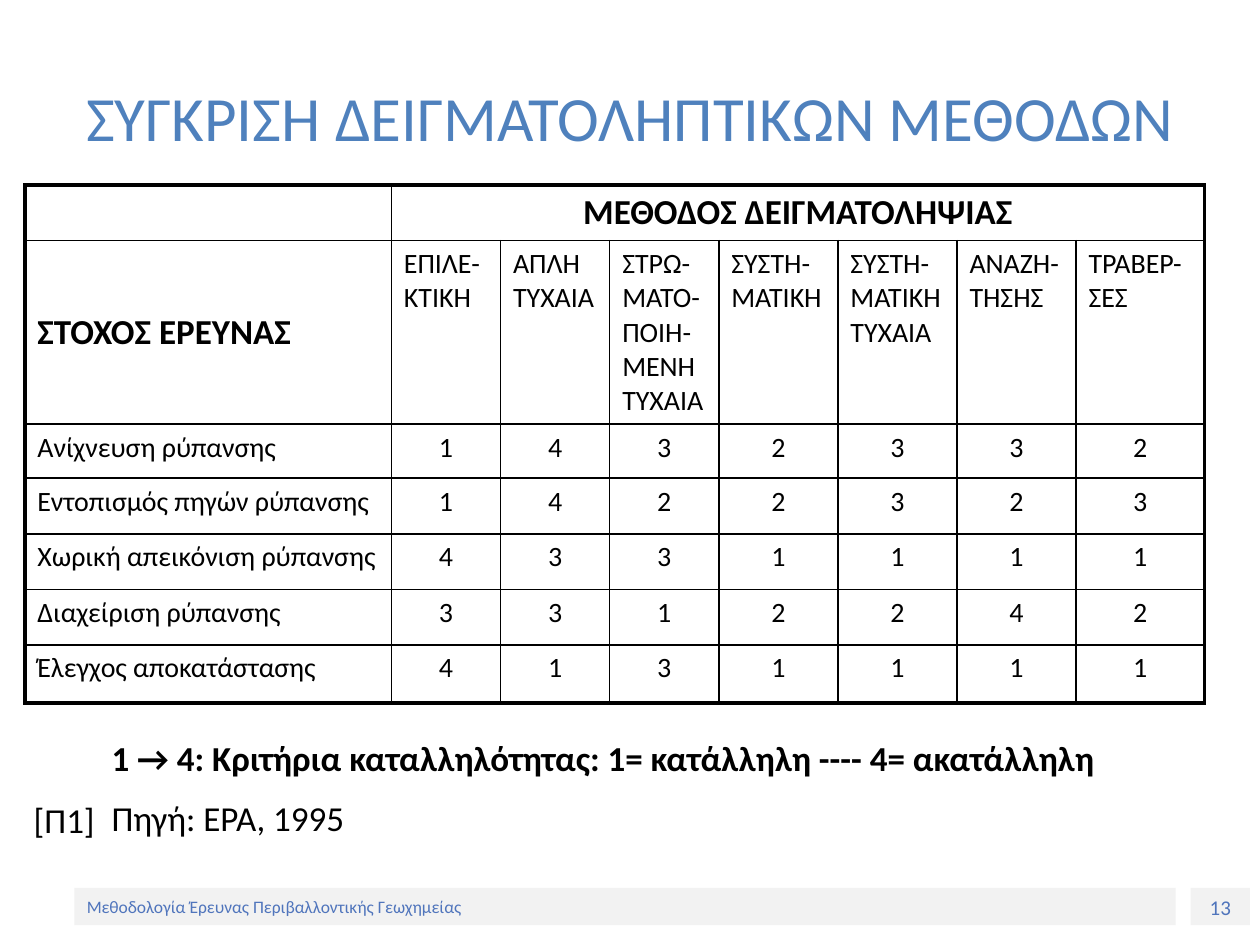
import pptx
import pptx.dml.color
import pptx.enum.shapes
import pptx.enum.text
import pptx.oxml
import pptx.oxml.ns
import pptx.util

Cm, Pt = pptx.util.Cm, pptx.util.Pt
ALIGN = pptx.enum.text.PP_ALIGN
ANCHOR = pptx.enum.text.MSO_ANCHOR

COLORS = {"ink": "000000", "title": "4F81BD", "foot": "5075BC", "band": "F2F2F2"}
FONT = "Calibri"

TITLE = "ΣΥΓΚΡΙΣΗ ΔΕΙΓΜΑΤΟΛΗΠΤΙΚΩΝ ΜΕΘΟΔΩΝ"
GROUP = "ΜΕΘΟΔΟΣ ΔΕΙΓΜΑΤΟΛΗΨΙΑΣ"
GOAL = "ΣΤΟΧΟΣ ΕΡΕΥΝΑΣ"
METHODS = [
    "ΕΠΙΛΕ-ΚΤΙΚΗ", "ΑΠΛΗ ΤΥΧΑΙΑ", "ΣΤΡΩ-ΜΑΤΟ-ΠΟΙΗ-ΜΕΝΗ ΤΥΧΑΙΑ", "ΣΥΣΤΗ-ΜΑΤΙΚΗ",
    "ΣΥΣΤΗ-ΜΑΤΙΚΗ ΤΥΧΑΙΑ", "ΑΝΑΖΗ-ΤΗΣΗΣ", "ΤΡΑΒΕΡ-ΣΕΣ",
]
SCORES = {
    "Ανίχνευση ρύπανσης": [1, 4, 3, 2, 3, 3, 2],
    "Εντοπισμός πηγών ρύπανσης": [1, 4, 2, 2, 3, 2, 3],
    "Χωρική απεικόνιση ρύπανσης": [4, 3, 3, 1, 1, 1, 1],
    "Διαχείριση ρύπανσης": [3, 3, 1, 2, 2, 4, 2],
    "Έλεγχος αποκατάστασης": [4, 1, 3, 1, 1, 1, 1],
}
KEY = "1 → 4: Κριτήρια καταλληλότητας: 1= κατάλληλη ---- 4= ακατάλληλη"
SOURCE = "Πηγή: EPA, 1995"
MARK = "[Π1]"
FOOTER = "Μεθοδολογία Έρευνας Περιβαλλοντικής Γεωχημείας"
PAGE = "13"

WIDTHS = [7.39] + [2.2] * 3 + [2.4] * 3 + [2.59]
HEIGHTS = [1.12, 3.7, 1.09, 1.12, 1.12, 1.12, 1.17]
THIN, THICK = 1, 2.25


def rgb(name):
    return pptx.dml.color.RGBColor.from_string(COLORS[name])


def style(para, text, size, color="ink", bold=False, align=ALIGN.LEFT):
    para.text = text
    para.alignment = align
    font = para.font
    font.name, font.size, font.bold = FONT, Pt(size), bold
    font.color.rgb = rgb(color)


def add_box(slide, area, anchor=ANCHOR.TOP):
    frame = slide.shapes.add_textbox(*map(Cm, area)).text_frame
    frame.word_wrap = True
    frame.vertical_anchor = anchor
    return frame


def add_band(slide, area, text, size, align, anchor):
    """Add a grey footer bar with its text."""
    kind = pptx.enum.shapes.MSO_SHAPE.RECTANGLE
    band = slide.shapes.add_shape(kind, *map(Cm, area))
    band.shadow.inherit = False
    band.fill.solid()
    band.fill.fore_color.rgb = rgb("band")
    band.line.fill.background()
    band.text_frame.vertical_anchor = anchor
    style(band.text_frame.paragraphs[0], text, size, "foot", align=align)


def set_edges(cell, widths):
    """Draw the cell's borders; widths are points by side: L, R, T, B."""
    props = cell._tc.get_or_add_tcPr()
    for side, width in widths.items():
        props.append(pptx.oxml.parse_xml(
            f'<a:ln{side} {pptx.oxml.ns.nsdecls("a")} w="{int(Pt(width))}">'
            f'<a:solidFill><a:srgbClr val="{COLORS["ink"]}"/></a:solidFill></a:ln{side}>'
        ))


def add_grid(slide):
    rows = [["", GROUP] + [""] * (len(METHODS) - 1), [GOAL] + METHODS]
    rows += [[goal, *map(str, marks)] for goal, marks in SCORES.items()]
    last, end = len(HEIGHTS) - 1, len(WIDTHS) - 1
    frame = slide.shapes.add_table(
        last + 1, end + 1, Cm(0.5), Cm(3.73), Cm(sum(WIDTHS)), Cm(sum(HEIGHTS)))
    table = frame.table
    table.first_row = table.horz_banding = False
    for col, width in zip(table.columns, WIDTHS):
        col.width = Cm(width)
    for row, height in zip(table.rows, HEIGHTS):
        row.height = Cm(height)
    group = table.cell(0, 1)
    group.merge(table.cell(0, end))

    for r, row in enumerate(rows):
        for c, text in enumerate(row):
            cell = table.cell(r, c)
            outer = c == end or cell.is_merge_origin
            set_edges(cell, {
                "L": THICK if c == 0 else THIN,
                "R": THICK if outer else THIN,
                "T": THICK if r == 0 else THIN,
                "B": THICK if r == last else THIN,
            })
            cell.fill.background()
            head = r == 0 or (r, c) == (1, 0)
            center = c > 0 and r != 1
            style(cell.text_frame.paragraphs[0], text, 20 if head else 16,
                  bold=head, align=ALIGN.CENTER if center else ALIGN.LEFT)
    table.cell(1, 0).vertical_anchor = ANCHOR.MIDDLE


def main():
    deck = pptx.Presentation()
    deck.slide_width, deck.slide_height = Cm(25.4), Cm(19.05)
    slide = deck.slides.add_slide(deck.slide_layouts[6])

    add_band(slide, (24, 17.9, 1.2, 0.75), PAGE, 12, ALIGN.CENTER, ANCHOR.TOP)
    add_band(slide, (1.5, 17.9, 22.2, 0.75), FOOTER, 10, ALIGN.LEFT, ANCHOR.MIDDLE)

    title = add_box(slide, (1.27, 0.76, 22.86, 3.18), ANCHOR.MIDDLE)
    style(title.paragraphs[0], TITLE, 36, "title", align=ALIGN.CENTER)

    add_grid(slide)

    notes = add_box(slide, (2, 14.73, 23.4, 2.39))
    style(notes.paragraphs[0], KEY, 20, bold=True)
    origin = notes.add_paragraph()
    style(origin, SOURCE, 20)
    origin.space_before = Pt(10)

    mark = add_box(slide, (0.43, 16.03, 1.9, 0.99), ANCHOR.MIDDLE)
    style(mark.paragraphs[0], MARK, 20)

    deck.save("out.pptx")


if __name__ == "__main__":
    main()
